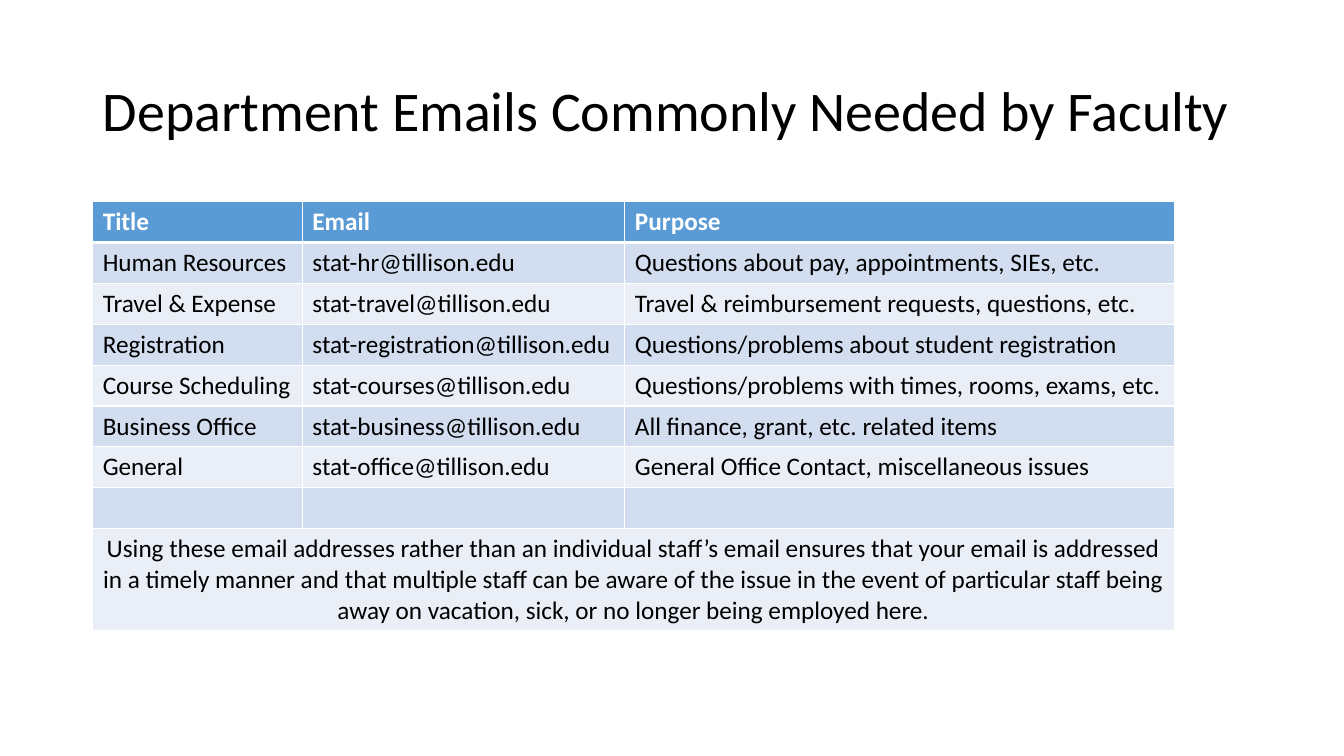
import pptx
import pptx.dml.color
import pptx.enum.text
import pptx.oxml
import pptx.oxml.ns
import pptx.util

PP_ALIGN = pptx.enum.text.PP_ALIGN
MIDDLE = pptx.enum.text.MSO_ANCHOR.MIDDLE
EMU_PER_PX = 4572  # 200 px to the inch

HEADER = ["Title", "Email", "Purpose"]
CONTACTS = [
    ("Human Resources", "hr", "Questions about pay, appointments, SIEs, etc."),
    ("Travel & Expense", "travel", "Travel & reimbursement requests, questions, etc."),
    ("Registration", "registration", "Questions/problems about student registration"),
    ("Course Scheduling", "courses", "Questions/problems with times, rooms, exams, etc."),
    ("Business Office", "business", "All finance, grant, etc. related items"),
    ("General", "office", "General Office Contact, miscellaneous issues"),
]
NOTE = (
    "Using these email addresses rather than an individual staff’s email ensures "
    "that your email is addressed in a timely manner and that multiple staff can be "
    "aware of the issue in the event of particular staff being away on vacation, "
    "sick, or no longer being employed here."
)


def px(n):
    return pptx.util.Emu(n * EMU_PER_PX)


def rgb(color):
    return pptx.dml.color.RGBColor.from_string(color)


class Deck:
    font = "Calibri"
    ink = "000000"
    paper = "FFFFFF"
    accent = "5B9BD5"
    bands = ["D2DEEF", "EAEFF7"]

    def __init__(self, width, height):
        self.prs = pptx.Presentation()
        self.prs.slide_width, self.prs.slide_height = px(width), px(height)

    def new_slide(self):
        self.s = self.prs.slides.add_slide(self.prs.slide_layouts[5])

    def style(self, p, size, color, bold=False, align=PP_ALIGN.LEFT):
        p.alignment = align
        p.font.name, p.font.size = self.font, pptx.util.Pt(size)
        p.font.color.rgb, p.font.bold = rgb(color), bold

    def title(self, text, x, y, w, h):
        sp = self.s.shapes.title
        sp.left, sp.top, sp.width, sp.height = px(x), px(y), px(w), px(h)
        tf = sp.text_frame
        tf.text = text
        tf.word_wrap, tf.vertical_anchor = True, MIDDLE
        tf.auto_size = pptx.enum.text.MSO_AUTO_SIZE.NONE
        p = tf.paragraphs[0]
        p.line_spacing = 0.9
        self.style(p, 40, self.ink)

    def borders(self, cell, bottom):
        tcPr = cell._tc.get_or_add_tcPr()
        for side, points in (("L", 1), ("R", 1), ("T", 1), ("B", bottom)):
            tcPr.append(pptx.oxml.parse_xml(
                f'<a:ln{side} {pptx.oxml.ns.nsdecls("a")} w="{points * 12700}">'
                f'<a:solidFill><a:srgbClr val="{self.paper}"/></a:solidFill>'
                f'</a:ln{side}>'))

    def table(self, rows, x, y, col_widths, row_heights):
        frame = self.s.shapes.add_table(
            len(rows), len(col_widths), px(x), px(y),
            px(sum(col_widths)), px(sum(row_heights)))
        table = frame.table
        for col, width in zip(table.columns, col_widths):
            col.width = px(width)
        for i, (row, height) in enumerate(zip(rows, row_heights)):
            table.rows[i].height = px(height)
            head = i == 0
            for j, text in enumerate(row):
                cell = table.cell(i, j)
                cell.text = text
                self.borders(cell, 3 if head else 1)
                cell.fill.solid()
                cell.fill.fore_color.rgb = rgb(
                    self.accent if head else self.bands[(i - 1) % 2])
                self.style(cell.text_frame.paragraphs[0], 18,
                           self.paper if head else self.ink, head)
        return table


def main():
    deck = Deck(2667, 1500)
    deck.new_slide()
    deck.title("Department Emails Commonly Needed by Faculty", 184, 80, 2300, 290)

    # Contacts, one empty row, then the note across all columns
    rows = [HEADER]
    rows += [(name, f"stat-{box}@tillison.edu", use) for name, box, use in CONTACTS]
    rows += [("", "", ""), (NOTE, "", "")]
    last = len(rows) - 1
    table = deck.table(rows, 184, 400, [416, 640, 1090], [81] * last + [200])
    note = table.cell(last, 0)
    note.merge(table.cell(last, 2))
    note.text_frame.paragraphs[0].alignment = PP_ALIGN.CENTER

    deck.prs.save("out.pptx")


if __name__ == "__main__":
    main()
